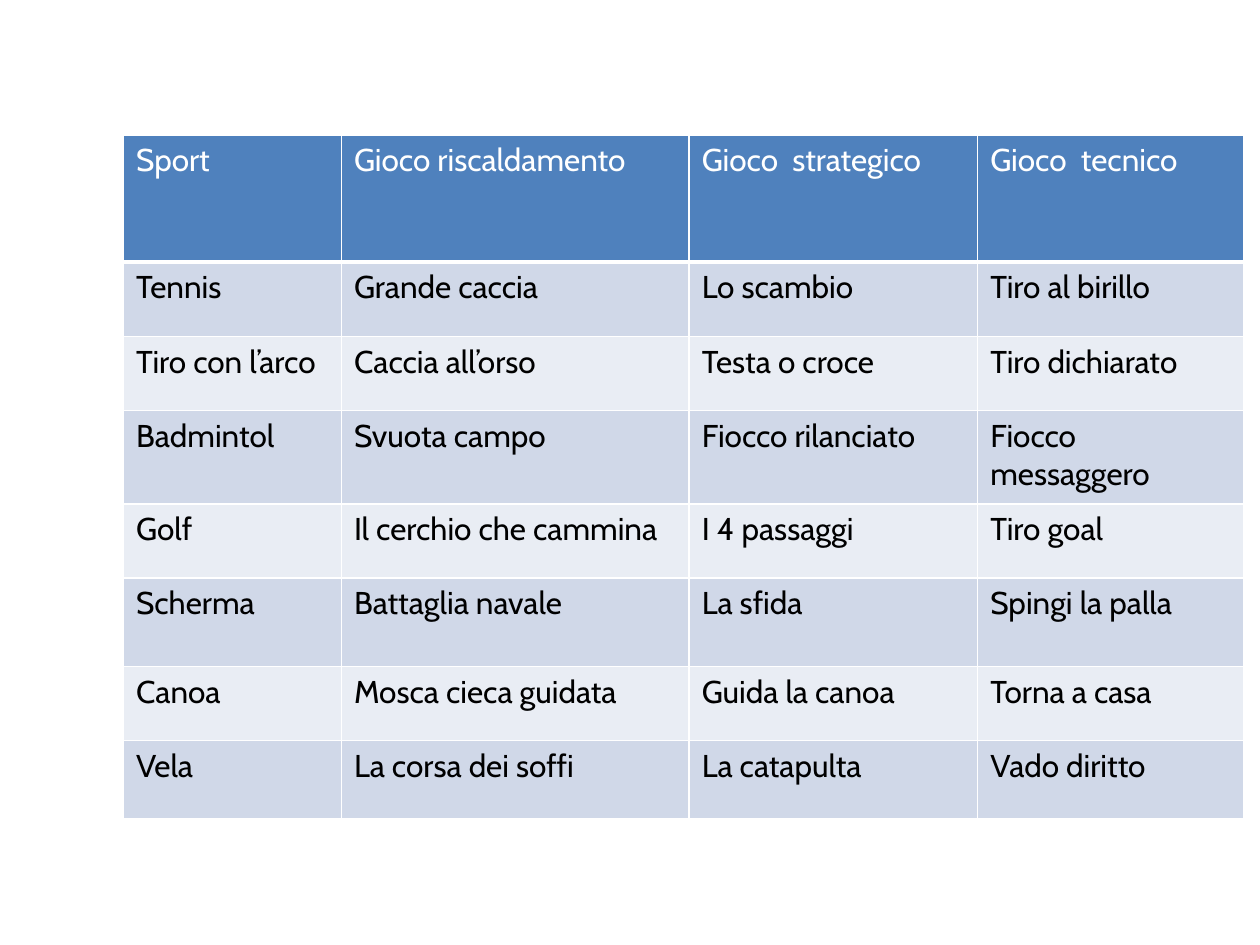
from lxml.etree import SubElement
from pptx import Presentation
from pptx.dml.color import RGBColor
from pptx.enum.text import PP_ALIGN
from pptx.oxml.ns import qn
from pptx.util import Inches, Pt

WHITE = RGBColor(0xFF, 0xFF, 0xFF)
BLACK = RGBColor(0x00, 0x00, 0x00)
HEADER_BLUE = RGBColor(0x4F, 0x81, 0xBD)
BANDS = (RGBColor(0xE9, 0xED, 0xF4), RGBColor(0xD0, 0xD8, 0xE8))

GAMES = [
    ("Sport", "Gioco riscaldamento", "Gioco  strategico", "Gioco  tecnico"),
    ("Tennis", "Grande caccia", "Lo scambio", "Tiro al birillo"),
    ("Tiro con l’arco", "Caccia all’orso", "Testa o croce", "Tiro dichiarato"),
    ("Badmintol", "Svuota campo", "Fiocco rilanciato", "Fiocco messaggero"),
    ("Golf", "Il cerchio che cammina", "I 4 passaggi", "Tiro goal"),
    ("Scherma", "Battaglia navale", "La sfida", "Spingi la palla"),
    ("Canoa", "Mosca cieca guidata", "Guida la canoa", "Torna a casa"),
    ("Vela", "La corsa dei soffi", "La catapulta", "Vado diritto"),
]
COLUMN_WIDTHS = (1.73, 2.76, 2.29, 2.11)
ROW_HEIGHTS = (1.01, 0.59, 0.59, 0.74, 0.59, 0.7, 0.59, 0.62)


def add_borders(cell, bottom_width):
    properties = cell._tc.get_or_add_tcPr()
    for side, width in (("L", 1), ("R", 1), ("T", 1), ("B", bottom_width)):
        border = SubElement(properties, qn(f"a:ln{side}"), w=str(Pt(width)))
        fill = SubElement(border, qn("a:solidFill"))
        SubElement(fill, qn("a:srgbClr"), val=str(WHITE))


def fill_cell(cell, words, row_number):
    is_header = row_number == 0
    add_borders(cell, 3 if is_header else 1)
    cell.fill.solid()
    cell.fill.fore_color.rgb = HEADER_BLUE if is_header else BANDS[row_number % 2]
    cell.text_frame.text = words
    paragraph = cell.text_frame.paragraphs[0]
    paragraph.alignment = PP_ALIGN.LEFT
    font = paragraph.runs[0].font
    font.name = "Cabin"
    font.size = Pt(18)
    font.bold = False
    font.color.rgb = WHITE if is_header else BLACK


def main():
    presentation = Presentation()
    presentation.slide_width = Inches(10)
    presentation.slide_height = Inches(7.5)
    slide = presentation.slides.add_slide(presentation.slide_layouts[6])

    games_table = slide.shapes.add_table(
        len(GAMES), len(COLUMN_WIDTHS), Inches(0.98), Inches(1.07),
        Inches(sum(COLUMN_WIDTHS)), Inches(sum(ROW_HEIGHTS)),
    ).table
    for column, width in zip(games_table.columns, COLUMN_WIDTHS):
        column.width = Inches(width)
    for row, height in zip(games_table.rows, ROW_HEIGHTS):
        row.height = Inches(height)
    for row_number, games in enumerate(GAMES):
        for column_number, words in enumerate(games):
            fill_cell(games_table.cell(row_number, column_number), words, row_number)

    presentation.save("out.pptx")


if __name__ == "__main__":
    main()
